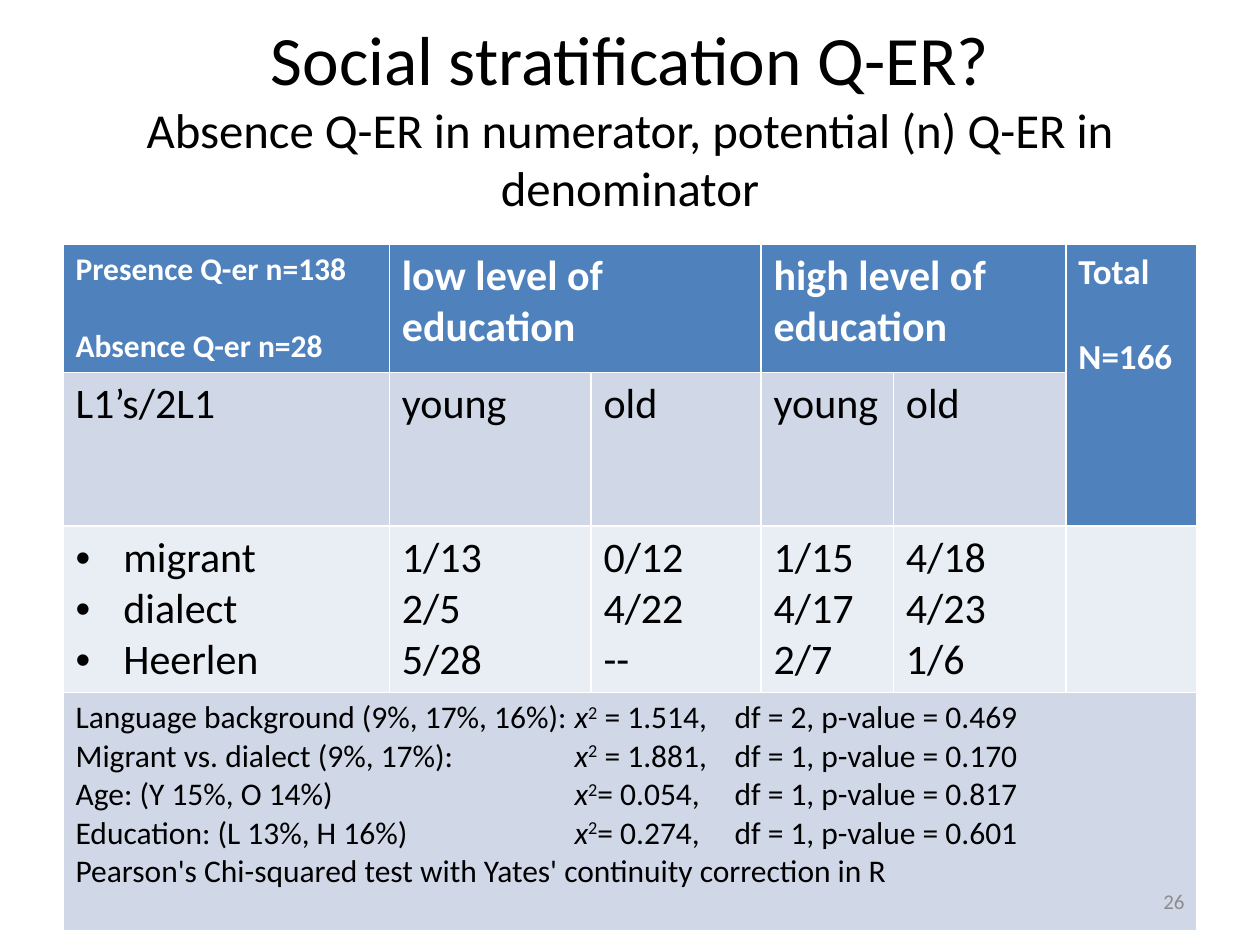
from lxml.etree import SubElement
from pptx import Presentation
from pptx.dml.color import RGBColor
from pptx.enum.text import MSO_ANCHOR, MSO_AUTO_SIZE, PP_ALIGN
from pptx.oxml.ns import qn
from pptx.util import Inches, Pt

BLACK = RGBColor(0x00, 0x00, 0x00)
WHITE = RGBColor(0xFF, 0xFF, 0xFF)
GREY = RGBColor(0x8C, 0x8C, 0x8C)
HEADER_BLUE = RGBColor(0x4F, 0x81, 0xBD)
BAND_DARK = RGBColor(0xD0, 0xD8, 0xE8)
BAND_LIGHT = RGBColor(0xE9, 0xED, 0xF4)


def write(paragraph, text, size=24, color=BLACK, bold=False, italic=False, raised=False):
    run = paragraph.add_run()
    run.text = text
    run.font.name = "Calibri"
    run.font.size = Pt(size)
    run.font.color.rgb = color
    run.font.bold = bold
    run.font.italic = italic
    if raised:
        run.font._element.set("baseline", "30000")


def paragraph_at(frame, index):
    return frame.paragraphs[0] if index == 0 else frame.add_paragraph()


deck = Presentation()
deck.slide_width, deck.slide_height = Inches(10), Inches(7.5)
W, H = deck.slide_width, deck.slide_height
margin, content_width = int(W * 0.05), int(W * 0.9)
slide = deck.slides.add_slide(deck.slide_layouts[5])

# Title with subtitle line
title = slide.shapes.title
title.left, title.top = margin, int(H * 0.04)
title.width, title.height = content_width, int(H / 6)
title.text_frame.auto_size = MSO_AUTO_SIZE.NONE
title.text_frame.vertical_anchor = MSO_ANCHOR.MIDDLE
heading = title.text_frame.paragraphs[0]
heading.alignment = PP_ALIGN.CENTER
write(heading, "Social stratification Q-ER?", size=39.6)
heading.add_line_break()
write(heading, "Absence Q-ER in numerator, potential (n) Q-ER in denominator", size=27.9)

# Table grid, fills and merged cells
column_widths = [2.59, 1.6, 1.35, 1.05, 1.37, 1.04]
row_heights = [0.94, 1.22, 1.22, 1.89]
row_fills = [HEADER_BLUE, BAND_DARK, BAND_LIGHT, BAND_DARK]
table = slide.shapes.add_table(
    len(row_heights), len(column_widths), margin, Inches(1.94),
    content_width, Inches(sum(row_heights))).table
for column, width in zip(table.columns, column_widths):
    column.width = Inches(width)
for row, height, fill in zip(table.rows, row_heights, row_fills):
    row.height = Inches(height)
    for cell in row.cells:
        cell.fill.solid()
        cell.fill.fore_color.rgb = fill
for first, last in [((0, 1), (0, 2)), ((0, 3), (0, 4)), ((0, 5), (1, 5)), ((3, 0), (3, 5))]:
    table.cell(*first).merge(table.cell(*last))

# Header row: second lines stand one line height lower
headers = [
    (0, 18, ["Presence Q-er n=138", "Absence Q-er n=28"]),
    (1, 24, ["low level of education"]),
    (3, 24, ["high level of education"]),
    (5, 20, ["Total", "N=166"]),
]
for column, size, lines in headers:
    for index, line in enumerate(lines):
        paragraph = paragraph_at(table.cell(0, column).text_frame, index)
        if index:
            paragraph.space_before = Pt(size * 1.22)
        write(paragraph, line, size=size, color=WHITE, bold=True)

# Age groups
for column, label in enumerate(["L1’s/2L1", "young", "old", "young", "old"]):
    write(table.cell(1, column).text_frame.paragraphs[0], label)

# Counts by language background
counts = [
    ["migrant", "1/13", "0/12", "1/15", "4/18"],
    ["dialect", "2/5", "4/22", "4/17", "4/23"],
    ["Heerlen", "5/28", "--", "2/7", "1/6"],
]
for line, values in enumerate(counts):
    for column, value in enumerate(values):
        paragraph = paragraph_at(table.cell(2, column).text_frame, line)
        write(paragraph, value)
        if column == 0:
            properties = paragraph._p.get_or_add_pPr()
            properties.set("marL", str(Inches(0.38)))
            properties.set("indent", str(-Inches(0.38)))
            SubElement(properties, qn("a:buFont"), typeface="Arial")
            SubElement(properties, qn("a:buChar"), char="•")

# Test results, aligned on tab stops
tests = [
    ("Language background (9%, 17%, 16%):", " = 1.514,", "df = 2, p-value = 0.469"),
    ("Migrant vs. dialect (9%, 17%):", " = 1.881,", "df = 1, p-value = 0.170"),
    ("Age: (Y 15%, O 14%)", "= 0.054,", "df = 1, p-value = 0.817"),
    ("Education: (L 13%, H 16%)", "= 0.274,", "df = 1, p-value = 0.601"),
]
results = table.cell(3, 0).text_frame
for index, (factor, statistic, significance) in enumerate(tests):
    paragraph = paragraph_at(results, index)
    tab_stops = SubElement(paragraph._p.get_or_add_pPr(), qn("a:tabLst"))
    for stop in (3.96, 5.23):
        SubElement(tab_stops, qn("a:tab"), pos=str(Inches(stop)), algn="l")
    write(paragraph, factor + "\t", size=18)
    write(paragraph, "x", size=18, italic=True)
    write(paragraph, "2", size=18, raised=True)
    write(paragraph, statistic + "\t" + significance, size=18)
write(results.add_paragraph(),
      "Pearson's Chi-squared test with Yates' continuity correction in R", size=18)

# Slide number
number_width = int(W * 0.233)
page_number = slide.shapes.add_textbox(
    margin + content_width - number_width, Inches(6.95), number_width, Inches(0.4)).text_frame
page_number.word_wrap = True
page_number.vertical_anchor = MSO_ANCHOR.MIDDLE
page_number.paragraphs[0].alignment = PP_ALIGN.RIGHT
write(page_number.paragraphs[0], "26", size=12, color=GREY)

deck.save("out.pptx")
